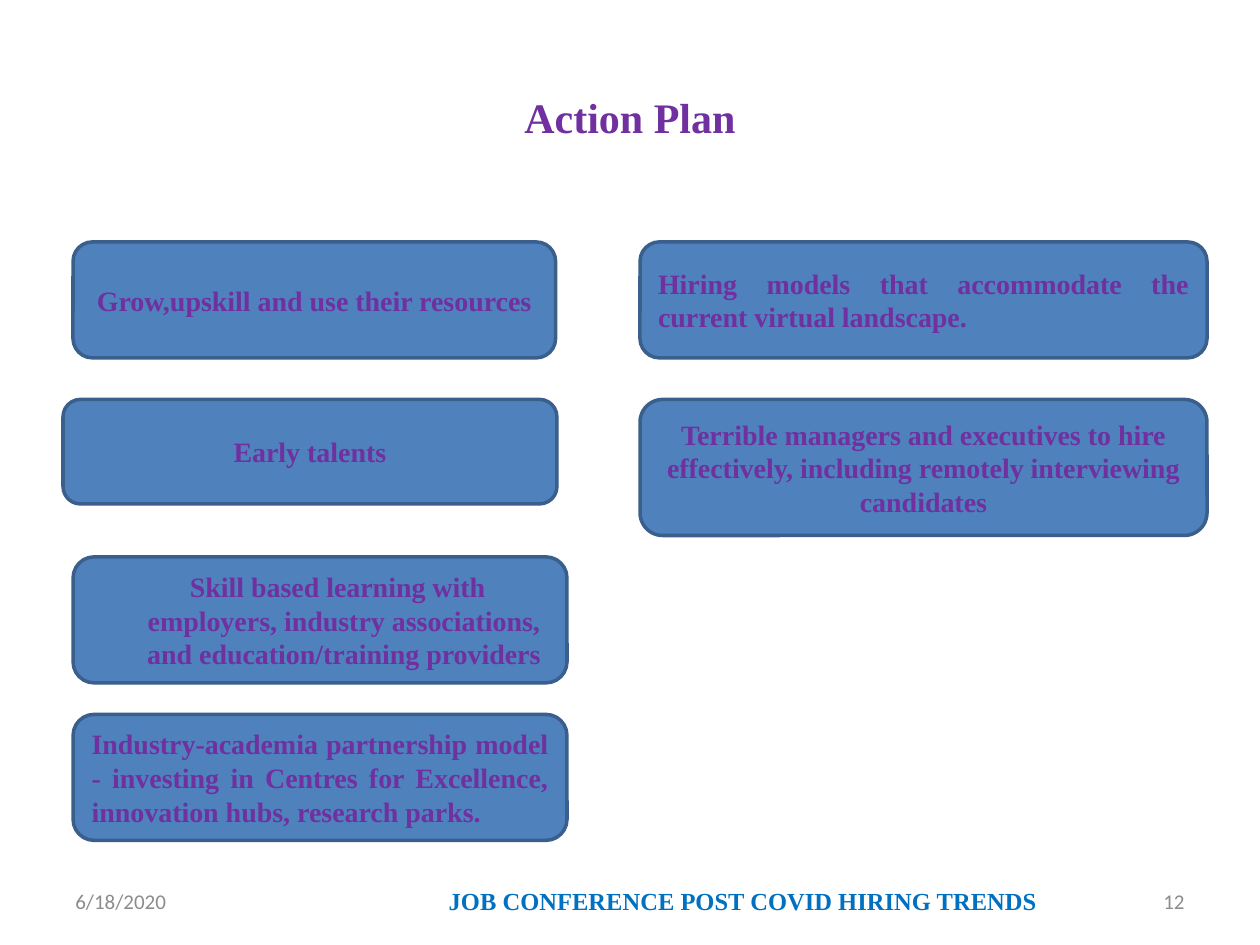
from lxml import etree
from pptx import Presentation
from pptx import util as u
from pptx.dml.color import RGBColor
from pptx.enum import shapes, text
from pptx.oxml.ns import qn

PURPLE = RGBColor(0x70, 0x30, 0xA0)
BLUE = RGBColor(0x4F, 0x81, 0xBD)
DARK_BLUE = RGBColor(0x3A, 0x5F, 0x8C)
FOOTER_BLUE = RGBColor(0x00, 0x70, 0xC0)
GREY = RGBColor(0x8C, 0x8C, 0x8C)

LEFT, CENTER, RIGHT, JUSTIFY = (text.PP_ALIGN.LEFT, text.PP_ALIGN.CENTER,
                                text.PP_ALIGN.RIGHT, text.PP_ALIGN.JUSTIFY)


def write(sp, words, size=16, font="Times New Roman", color=PURPLE, bold=True,
          align=CENTER, margin=0, indent=0, before=0):
    tf = sp.text_frame
    tf.word_wrap = True
    tf.auto_size = text.MSO_AUTO_SIZE.NONE
    tf.vertical_anchor = text.MSO_ANCHOR.MIDDLE
    p = tf.paragraphs[0]
    p.alignment = align
    p.space_before = u.Pt(before)
    pPr = p._p.get_or_add_pPr()
    pPr.set("marL", str(u.Inches(margin)))
    pPr.set("indent", str(u.Inches(indent)))
    etree.SubElement(pPr, qn("a:buNone"))
    r = p.add_run()
    r.text = words
    r.font.size = u.Pt(size)
    r.font.name = font
    r.font.bold = bold
    r.font.color.rgb = color


class Deck:
    def __init__(self):
        self.prs = Presentation()
        self.prs.slide_width, self.prs.slide_height = u.Inches(10), u.Inches(7.5)
        self.s = self.prs.slides.add_slide(self.prs.slide_layouts[1])

    def place(self, sp, left, top, width, height):
        sp.left, sp.top = u.Inches(left), u.Inches(top)
        sp.width, sp.height = u.Inches(width), u.Inches(height)

    def title(self, words):
        sp = self.s.shapes.title
        self.place(sp, 0.5, 0.3, 9, 1.25)
        write(sp, words, size=24)

    def paint(self, sp):
        sp.fill.solid()
        sp.fill.fore_color.rgb = BLUE
        sp.line.color.rgb = DARK_BLUE
        sp.line.width = u.Pt(2)

    def card(self, box, words, **fmt):
        sp = self.s.shapes.add_shape(shapes.MSO_SHAPE.ROUNDED_RECTANGLE,
                                     *map(u.Inches, box))
        sp.shadow.inherit = False
        self.paint(sp)
        write(sp, words, **fmt)

    def body_card(self, box, words, **fmt):
        sp = self.s.placeholders[1]
        self.place(sp, *box)
        # Give the body placeholder the outline of the other cards
        geom = etree.SubElement(sp._element.spPr, qn("a:prstGeom"), prst="roundRect")
        etree.SubElement(geom, qn("a:avLst"))
        self.paint(sp)
        write(sp, words, **fmt)

    def footer(self, left, width, words, **fmt):
        sp = self.s.shapes.add_textbox(*map(u.Inches, (left, 6.95, width, 0.4)))
        write(sp, words, **fmt)


def main():
    deck = Deck()
    deck.title("Action Plan")

    # Cards: rows share one pitch
    rows = [1.92 + 1.25 * i for i in range(4)]
    left, right = 0.58, 5.08
    deck.card((left, rows[0], 3.83, 0.92), "Grow,upskill and use their resources")
    deck.body_card((0.5, rows[1], 3.92, 0.83), "Early talents",
                   margin=0.38, indent=-0.38, before=3)
    deck.card((left, rows[2], 3.92, 1),
              "Skill based learning with employers, industry associations, "
              "and education/training providers",
              margin=0.38, indent=-0.1, before=3)
    deck.card((left, rows[3], 3.92, 1),
              "Industry-academia partnership model - investing in Centres for "
              "Excellence, innovation hubs, research parks.", align=JUSTIFY)
    deck.card((right, rows[0], 4.5, 0.92),
              "Hiring models that accommodate the current virtual landscape.",
              align=JUSTIFY)
    deck.card((right, rows[1], 4.5, 1.08),
              "Terrible managers and executives to hire effectively, including "
              "remotely interviewing candidates")

    # Footer
    small = dict(size=12, font="Calibri", color=GREY, bold=False)
    deck.footer(0.5, 2.33, "6/18/2020", align=LEFT, **small)
    deck.footer(7.17, 2.33, "12", align=RIGHT, **small)
    deck.footer(3.42, 5, "JOB CONFERENCE POST COVID HIRING TRENDS ",
                size=14, color=FOOTER_BLUE)

    deck.prs.save("out.pptx")


if __name__ == "__main__":
    main()
